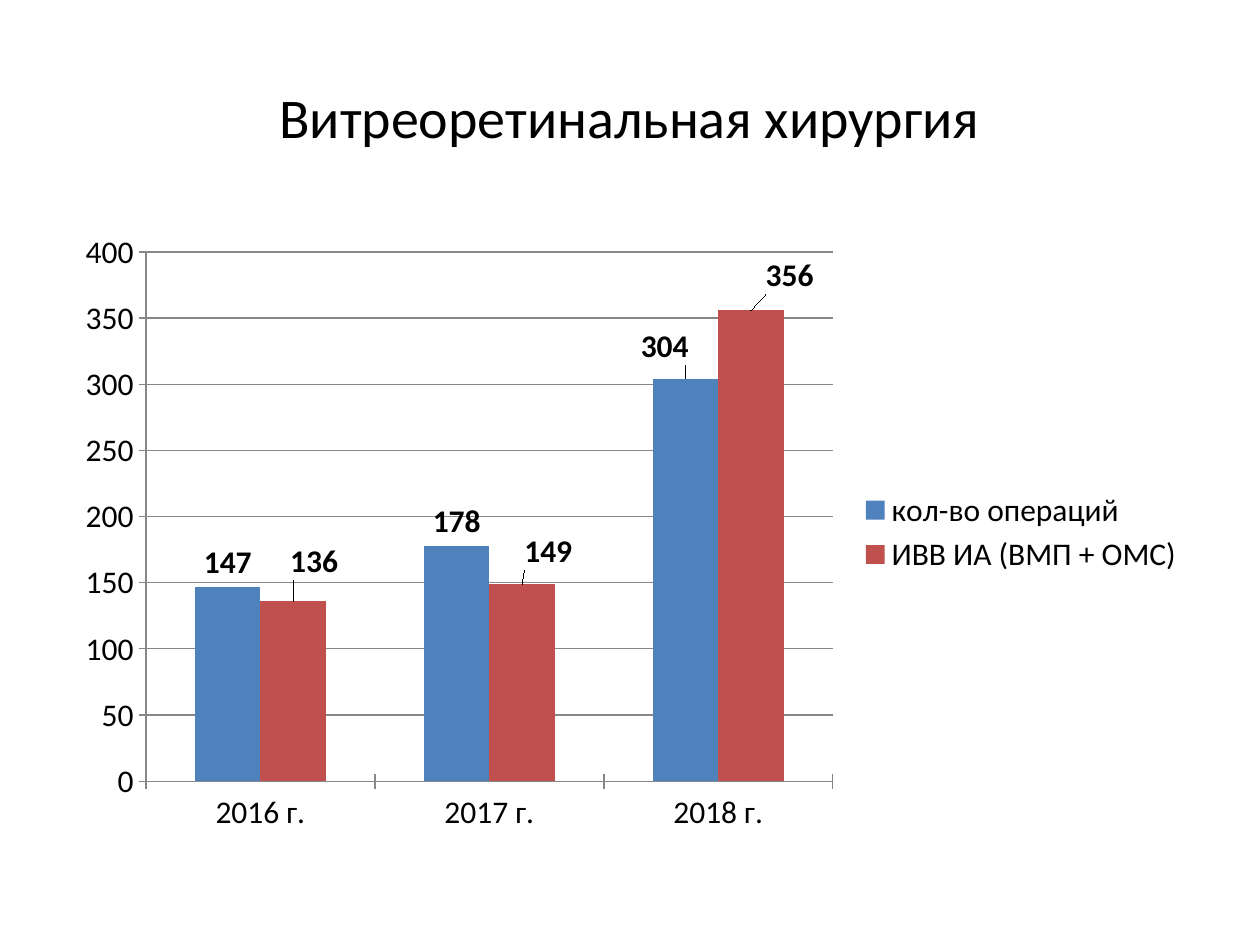
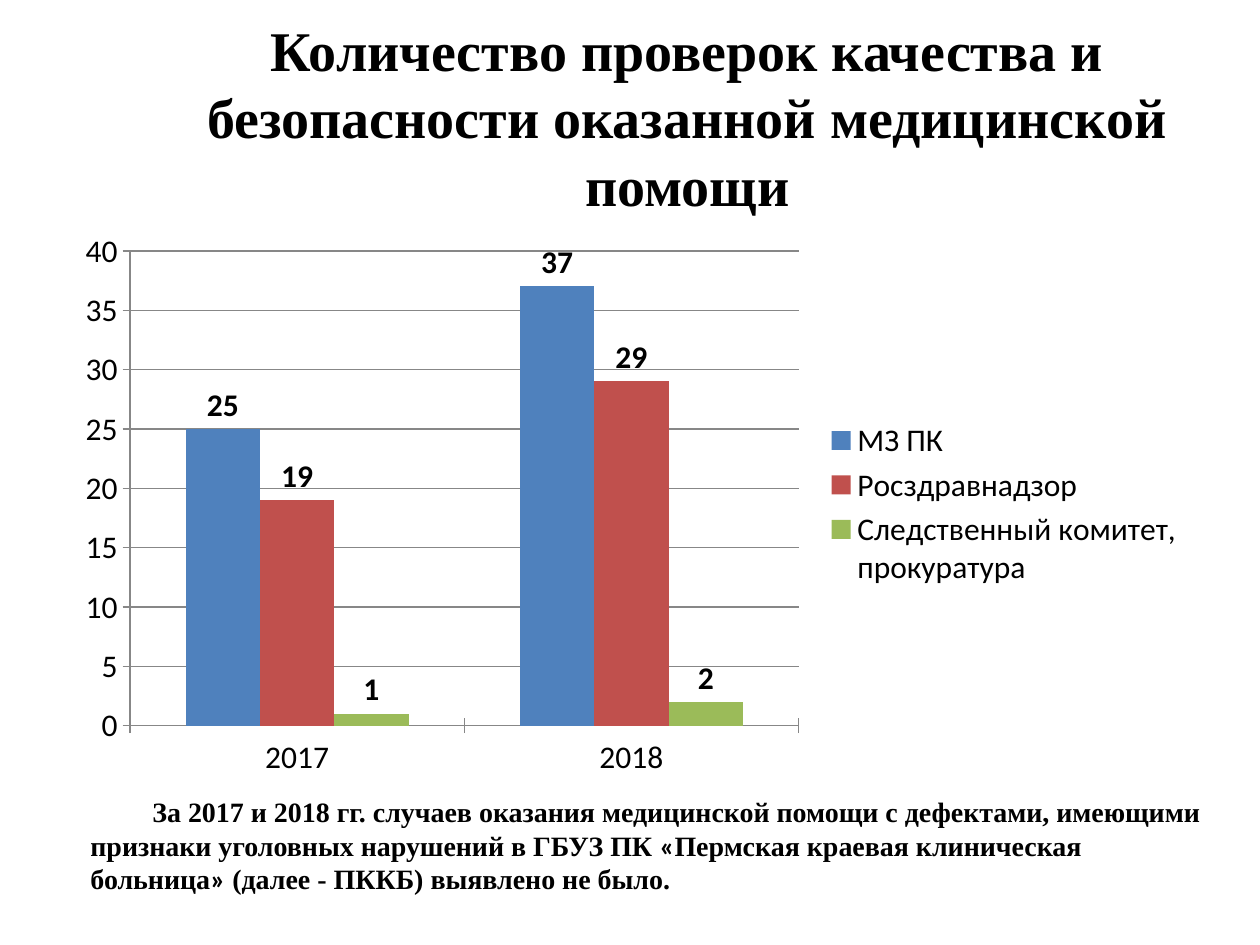
"""Build two slides with clustered column charts on clinic results."""
from lxml.etree import SubElement
from pptx import Presentation as Deck
from pptx.chart.data import CategoryChartData as Data
from pptx.dml.color import RGBColor as Rgb
from pptx.enum.chart import XL_CHART_TYPE as Kind
from pptx.enum.chart import XL_LABEL_POSITION as Spot
from pptx.enum.chart import XL_LEGEND_POSITION as Side
from pptx.enum.chart import XL_TICK_MARK as Tick
from pptx.enum.text import MSO_ANCHOR as Anchor
from pptx.enum.text import MSO_AUTO_SIZE as Fit
from pptx.enum.text import PP_ALIGN as Align
from pptx.oxml.ns import qn
from pptx.util import Pt

COLORS = {"text": "000000", "grid": "878787", "blue": "4F81BD",
          "red": "C0504D", "green": "9BBB59"}
FILLS = ("blue", "red", "green")
SANS, SERIF = "Calibri", "Times New Roman"
LEFT, RIGHT = 36, 684
WIDE = RIGHT - LEFT


def color(name):
    return Rgb.from_string(COLORS[name])


def style(font, size, face=None, bold=False):
    font.size, font.bold = Pt(size), bold
    font.color.rgb = color("text")
    if face:
        font.name = face


def place(shape, left, top, width, height):
    shape.left, shape.top = Pt(left), Pt(top)
    shape.width, shape.height = Pt(width), Pt(height)


def add_slide(deck, title, left=LEFT, face=SANS, bold=False):
    slide = deck.slides.add_slide(deck.slide_layouts[5])
    shape = slide.shapes.title
    place(shape, left, 21.6, RIGHT - left, 90)
    frame = shape.text_frame
    frame.text = title
    frame.auto_size, frame.vertical_anchor = Fit.NONE, Anchor.MIDDLE
    para = frame.paragraphs[0]
    para.alignment = Align.CENTER
    style(para.font, 32, face, bold)
    return slide


def format_axis(axis):
    axis.major_tick_mark, axis.minor_tick_mark = Tick.CROSS, Tick.NONE
    axis.format.line.color.rgb = color("grid")
    axis.format.line.width = Pt(0.75)


def shift_label(series, point, right, down, height):
    label = series.points[point].data_label
    style(label.font, 18, SANS, True)
    label.position = Spot.OUTSIDE_END
    index = series._element.xpath(f'c:dLbls/c:dLbl/c:idx[@val="{point}"]')[0]
    for old in index.getparent().findall(qn("c:layout")):
        index.getparent().remove(old)
    layout = SubElement(index.getparent(), qn("c:layout"))
    index.addnext(layout)
    manual = SubElement(layout, qn("c:manualLayout"))
    for tag, value in (("c:x", right / WIDE), ("c:y", down / height)):
        SubElement(manual, qn(tag)).set("val", f"{value:.4f}")


def add_chart(slide, height, cats, rows, shifts=()):
    data = Data()
    data.categories = cats
    for name, values in rows:
        data.add_series(name, values)
    chart = slide.shapes.add_chart(Kind.COLUMN_CLUSTERED, Pt(LEFT), Pt(126),
                                   Pt(WIDE), Pt(height), data).chart
    style(chart.font, 18, SANS)
    chart.has_title = False
    chart.has_legend = True
    chart.legend.position = Side.RIGHT
    chart.legend.include_in_layout = False
    for axis in (chart.category_axis, chart.value_axis):
        format_axis(axis)
    grid = chart.value_axis.major_gridlines.format.line
    grid.color.rgb, grid.width = color("grid"), Pt(0.75)
    plot = chart.plots[0]
    plot.gap_width, plot.overlap, plot.vary_by_categories = 150, 0, False
    for series, fill in zip(plot.series, FILLS):
        series.format.fill.solid()
        series.format.fill.fore_color.rgb = color(fill)
        labels = series.data_labels
        labels.show_value, labels.position = True, Spot.OUTSIDE_END
        style(labels.font, 18, SANS, True)
    for row, point, right, down in shifts:
        shift_label(plot.series[row], point, right, down, height)


def add_note(slide, parts):
    box = slide.shapes.add_textbox(Pt(44.6), Pt(450), Pt(658), Pt(65.5))
    frame = box.text_frame
    frame.word_wrap, frame.auto_size = True, Fit.SHAPE_TO_FIT_TEXT
    frame.vertical_anchor = Anchor.MIDDLE
    para = frame.paragraphs[0]
    props = para._p.get_or_add_pPr()
    props.set("marL", "0")
    props.set("indent", str(Pt(35.4)))
    style(para.font, 16, bold=True)
    for text in parts:
        run = para.add_run()
        run.text = text
        style(run.font, 16, SANS if text in "«»" else SERIF, True)


def main():
    deck = Deck()
    deck.slide_width, deck.slide_height = Pt(720), Pt(540)

    slide = add_slide(deck, "Витреоретинальная хирургия")
    add_chart(slide, 356.4, ("2016 г.", "2017 г.", "2018 г."),
              (("кол-во операций", (147, 178, 304)),
               ("ИВВ ИА (ВМП + ОМС)", (136, 149, 356))),
              ((0, 2, -12, -5), (1, 0, 12, -9), (1, 1, 15, -5), (1, 2, 22, -6)))

    slide = add_slide(deck, "Количество проверок качества и безопасности "
                      "оказанной медицинской помощи", 101.5, SERIF, True)
    add_note(slide, ("За 2017 и 2018 гг. случаев оказания медицинской помощи "
                     "с дефектами, имеющими признаки уголовных нарушений "
                     "в ГБУЗ ПК ", "«", "Пермская краевая клиническая больница",
                     "»", " (далее - ПККБ) выявлено не было."))
    add_chart(slide, 324, ("2017", "2018"),
              (("МЗ ПК", (25, 37)), ("Росздравнадзор", (19, 29)),
               ("Следственный комитет, прокуратура", (1, 2))))

    deck.save("out.pptx")


if __name__ == "__main__":
    main()
